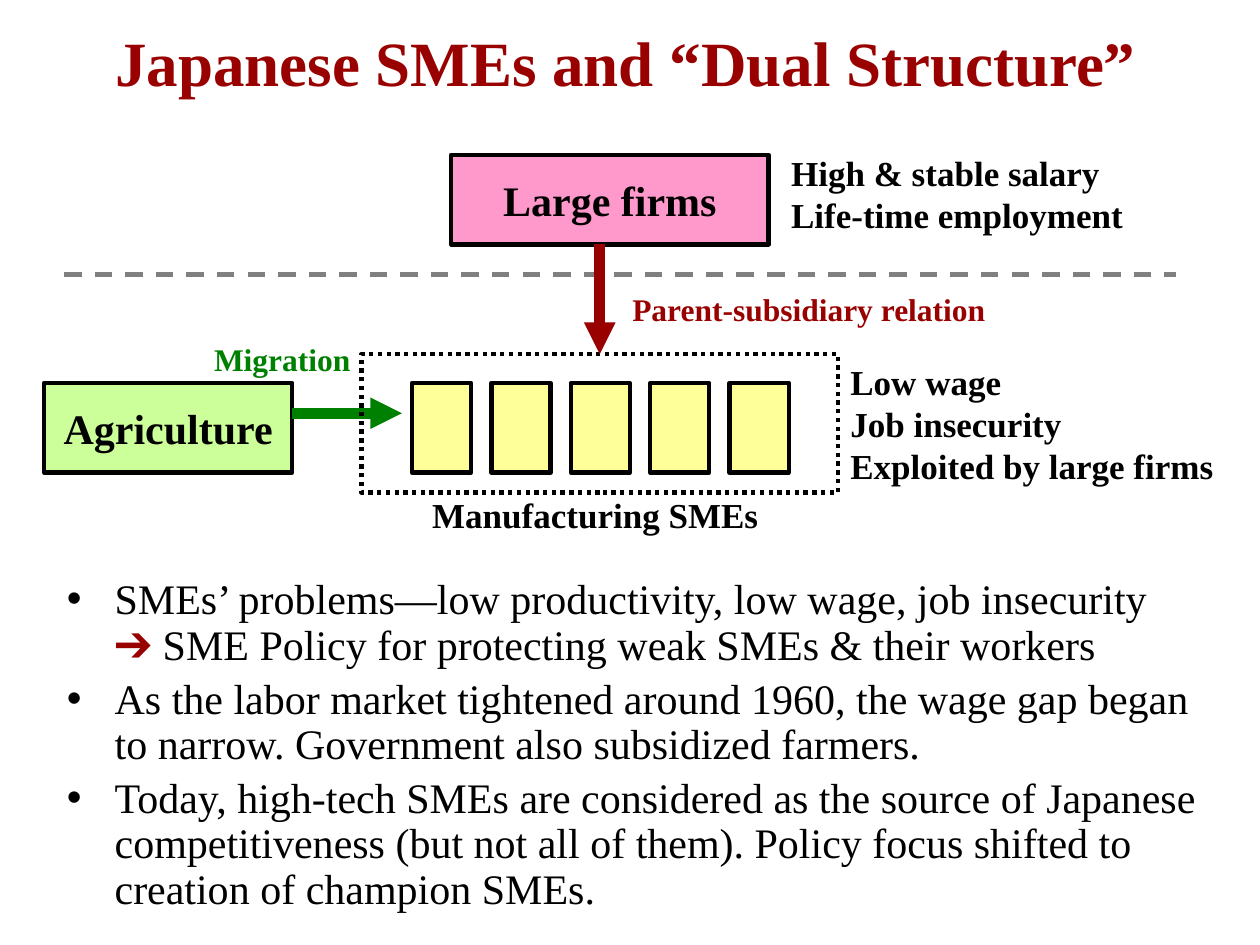
from lxml.etree import SubElement
from pptx import Presentation
from pptx.dml.color import RGBColor
from pptx.enum.dml import MSO_LINE
from pptx.enum.shapes import MSO_CONNECTOR, MSO_SHAPE
from pptx.enum.text import MSO_ANCHOR, MSO_AUTO_SIZE, PP_ALIGN
from pptx.oxml.ns import qn
from pptx.util import Pt

EMU_PER_PX = 9144  # 100 px to the inch
FONT = "Times New Roman"
COLORS = {
    "black": "000000", "red": "990000", "green": "008000", "gray": "808080",
    "pink": "FF99CC", "lime": "CCFF99", "yellow": "FFFF99",
}


def px(*lengths):
    return [length * EMU_PER_PX for length in lengths]


def rgb(color):
    return RGBColor.from_string(COLORS[color])


class SlideBuilder:
    line_width = 2.5

    def __init__(self, slide):
        self.slide = slide

    def style_runs(self, paragraph, size, color="black", bold=True):
        for run in paragraph.runs:
            run.font.name = FONT
            run.font.size = Pt(size)
            run.font.bold = bold
            run.font.color.rgb = rgb(color)
        for line_break in paragraph._p.findall(qn("a:br")):
            SubElement(line_break, qn("a:rPr"), sz=str(size * 100))

    def place(self, placeholder, box):
        placeholder.left, placeholder.top, placeholder.width, placeholder.height = px(*box)
        frame = placeholder.text_frame
        frame.auto_size = MSO_AUTO_SIZE.NONE
        return frame

    def title(self, text, box):
        frame = self.place(self.slide.shapes.title, box)
        frame.text = text
        frame.vertical_anchor = MSO_ANCHOR.MIDDLE
        heading = frame.paragraphs[0]
        heading.alignment = PP_ALIGN.CENTER
        self.style_runs(heading, 36, "red")

    def bullets(self, points, box, accent):
        """Fill the body; each occurrence of the accent symbol is red."""
        frame = self.place(self.slide.placeholders[1], box)
        frame.vertical_anchor = MSO_ANCHOR.TOP
        for index, point in enumerate(points):
            paragraph = frame.add_paragraph() if index else frame.paragraphs[0]
            before, symbol, after = point.partition(accent)
            paragraph.text = before
            for part in filter(None, (symbol, after)):
                paragraph.add_run().text = part
            self.style_runs(paragraph, 24, bold=False)
            for run in paragraph.runs:
                if run.text == accent:
                    run.font.color.rgb = rgb("red")
            paragraph.line_spacing = 0.9
            paragraph.space_before = Pt(5)
            properties = paragraph._p.get_or_add_pPr()
            indent, = px(38)
            properties.set("marL", str(indent))
            properties.set("indent", str(-indent))
            SubElement(properties, qn("a:buChar"), char="•")

    def rect(self, box, fill=None, text="", dash=None):
        shape = self.slide.shapes.add_shape(MSO_SHAPE.RECTANGLE, *px(*box))
        shape.shadow.inherit = False
        if fill:
            shape.fill.solid()
            shape.fill.fore_color.rgb = rgb(fill)
        else:
            shape.fill.background()
        shape.line.color.rgb = rgb("black")
        shape.line.width = Pt(self.line_width)
        if dash:
            shape.line.dash_style = dash
        if text:
            frame = shape.text_frame
            frame.text = text
            frame.word_wrap = False
            frame.vertical_anchor = MSO_ANCHOR.MIDDLE
            frame.paragraphs[0].alignment = PP_ALIGN.CENTER
            self.style_runs(frame.paragraphs[0], 24)
        return shape

    def label(self, text, box, size=20, color="black", align=PP_ALIGN.LEFT):
        frame = self.slide.shapes.add_textbox(*px(*box)).text_frame
        frame.word_wrap = True
        frame.text = text
        frame.paragraphs[0].alignment = align
        self.style_runs(frame.paragraphs[0], size, color)

    def line(self, ends, color, width=line_width, dash=None, arrow=False):
        connector = self.slide.shapes.add_connector(MSO_CONNECTOR.STRAIGHT, *px(*ends))
        connector.line.color.rgb = rgb(color)
        connector.line.width = Pt(width)
        if dash:
            connector.line.dash_style = dash
        if arrow:
            SubElement(connector.line._get_or_add_ln(), qn("a:tailEnd"), type="triangle")
        SubElement(connector._element.spPr, qn("a:effectLst"))
        return connector


def main():
    prs = Presentation()
    prs.slide_width, prs.slide_height = px(1000, 750)
    page = SlideBuilder(prs.slides.add_slide(prs.slide_layouts[1]))

    page.title("Japanese SMEs and “Dual Structure”", (20, 13, 953, 72))
    page.bullets([
        "SMEs’ problems—low productivity, low wage, job insecurity\v"
        "➔ SME Policy for protecting weak SMEs & their workers",
        "As the labor market tightened around 1960, the wage gap began to narrow. "
        "Government also subsidized farmers.",
        "Today, high-tech SMEs are considered as the source of Japanese competitiveness "
        "(but not all of them). Policy focus shifted to creation of champion SMEs.",
    ], (43, 454, 921, 291), accent="➔")

    page.rect((35, 304, 197, 71), "lime", "Agriculture")
    page.rect((358, 123, 252, 71), "pink", "Large firms")
    for column in range(5):
        page.rect((327 + 63 * column, 304, 47, 71), "yellow")
    page.line((232, 328, 319, 328), "green", 6, arrow=True)
    sme_sector = page.rect((287, 281, 378, 110), dash=MSO_LINE.ROUND_DOT)

    page.label("High & stable salary\vLife-time employment", (618, 115, 315, 77))
    page.label("Low wage\vJob insecurity\vExploited by large firms", (665, 281, 315, 110))
    page.label("Migration", (153, 265, 142, 40), 18, "green", PP_ALIGN.CENTER)
    page.label("Parent-subsidiary relation", (492, 225, 410, 40), 18, "red")
    page.label("Manufacturing SMEs", (311, 387, 323, 43), align=PP_ALIGN.CENTER)

    page.line((51, 218, 933, 218), "gray", dash=MSO_LINE.DASH)
    subsidiary_link = page.line((476, 194, 476, 281), "red", 6, arrow=True)
    subsidiary_link.end_connect(sme_sector, 0)

    prs.save("out.pptx")


if __name__ == "__main__":
    main()
